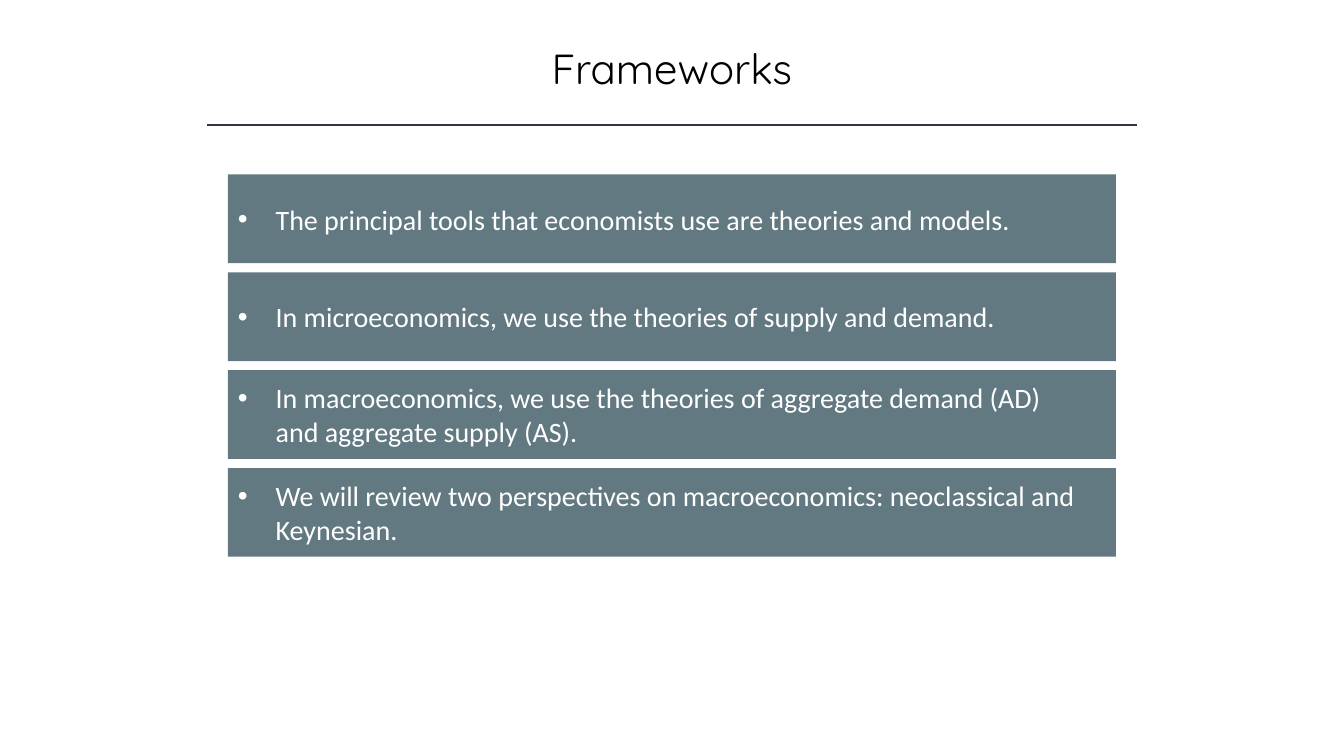
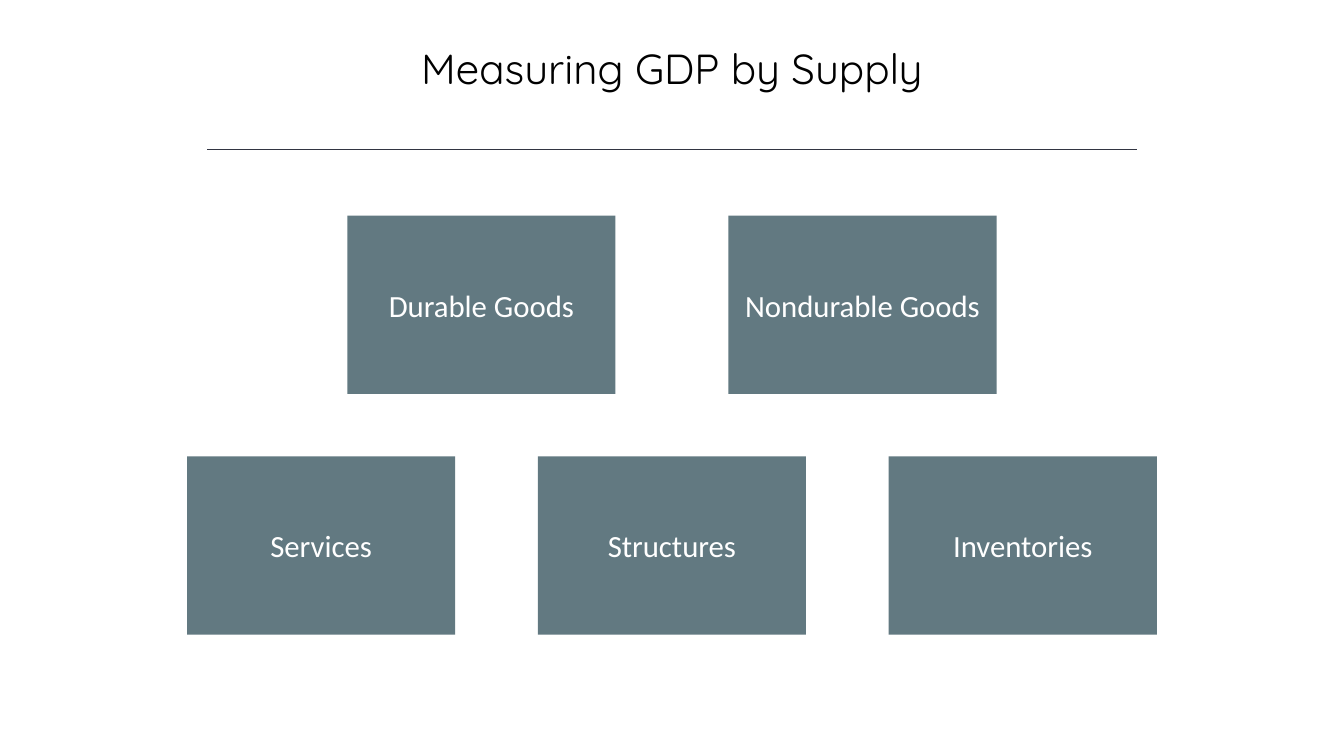
"""Build two economics slides: frameworks, and measuring GDP by supply."""
import pptx
import pptx.dml.color
import pptx.enum.shapes
import pptx.enum.text
import pptx.oxml.xmlchemy
import pptx.util

Pt = pptx.util.Pt
ALIGN = pptx.enum.text.PP_ALIGN
MIDDLE = pptx.enum.text.MSO_ANCHOR.MIDDLE
RECTANGLE = pptx.enum.shapes.MSO_SHAPE.RECTANGLE
OxmlElement = pptx.oxml.xmlchemy.OxmlElement
SLIDE_WIDTH = 960
BLACK, WHITE, SLATE, RULE = "000000", "FFFFFF", "627981", "323542"


def rgb(value):
    return pptx.dml.color.RGBColor.from_string(value)


def write(shape, text, font, size, color, align):
    frame = shape.text_frame
    frame.word_wrap = True
    frame.vertical_anchor = MIDDLE
    if shape.shape_type == pptx.enum.shapes.MSO_SHAPE_TYPE.AUTO_SHAPE:
        shape.shadow.inherit = False
        shape.fill.solid()
        shape.fill.fore_color.rgb = rgb(SLATE)
        shape.line.fill.background()
    paragraph = frame.paragraphs[0]
    paragraph.alignment = align
    run = paragraph.add_run()
    run.text = text
    run.font.name = font
    run.font.size = Pt(size)
    run.font.color.rgb = rgb(color)
    return paragraph


deck = pptx.Presentation()
deck.slide_width, deck.slide_height = Pt(SLIDE_WIDTH), Pt(540)

slides = []
for heading, rule_top in (("Frameworks", 89.3), ("Measuring GDP by Supply", 106.6)):
    slide = deck.slides.add_slide(deck.slide_layouts[6])
    title = slide.shapes.add_textbox(Pt(120), Pt(26.6), Pt(720), Pt(44))
    write(title, heading, "Quicksand", 30, BLACK, ALIGN.CENTER)
    rule = slide.shapes.add_connector(
        pptx.enum.shapes.MSO_CONNECTOR.STRAIGHT,
        Pt(148), Pt(rule_top), Pt(SLIDE_WIDTH - 148), Pt(rule_top))
    rule.line.color.rgb = rgb(RULE)
    rule.line.width = Pt(1)
    rule._element.spPr.append(OxmlElement("a:effectLst"))
    slides.append(slide)
frameworks, supply = slides

statements = (
    "The principal tools that economists use are theories and models.",
    "In microeconomics, we use the theories of supply and demand.",
    "In macroeconomics, we use the theories of aggregate demand (AD) and aggregate supply (AS).",
    "We will review two perspectives on macroeconomics: neoclassical and Keynesian.",
)
for index, statement in enumerate(statements):
    band = frameworks.shapes.add_shape(
        RECTANGLE, Pt(162.8), Pt(124.6 + 69.9 * index), Pt(634.4), Pt(63.4))
    band.text_frame.margin_right = Pt(26.6)
    point = write(band, statement, "Calibri", 20, WHITE, ALIGN.LEFT)
    properties = point._p.get_or_add_pPr()
    properties.set("marL", str(Pt(27)))
    properties.set("indent", str(-Pt(27)))
    bullet_font = OxmlElement("a:buFont")
    bullet_font.set("typeface", "Arial")
    bullet = OxmlElement("a:buChar")
    bullet.set("char", "•")
    properties.extend([bullet_font, bullet])

card_width, card_height = 191.5, 127.4
rows = (
    (154, 272.2, ("Durable Goods", "Nondurable Goods")),
    (326, 250.6, ("Services", "Structures", "Inventories")),
)
for top, pitch, categories in rows:
    row_width = card_width + pitch * (len(categories) - 1)
    row_left = (SLIDE_WIDTH - row_width) / 2
    for index, category in enumerate(categories):
        card = supply.shapes.add_shape(
            RECTANGLE, Pt(row_left + pitch * index), Pt(top),
            Pt(card_width), Pt(card_height))
        write(card, category, "Calibri", 22, WHITE, ALIGN.CENTER)

deck.save("out.pptx")
